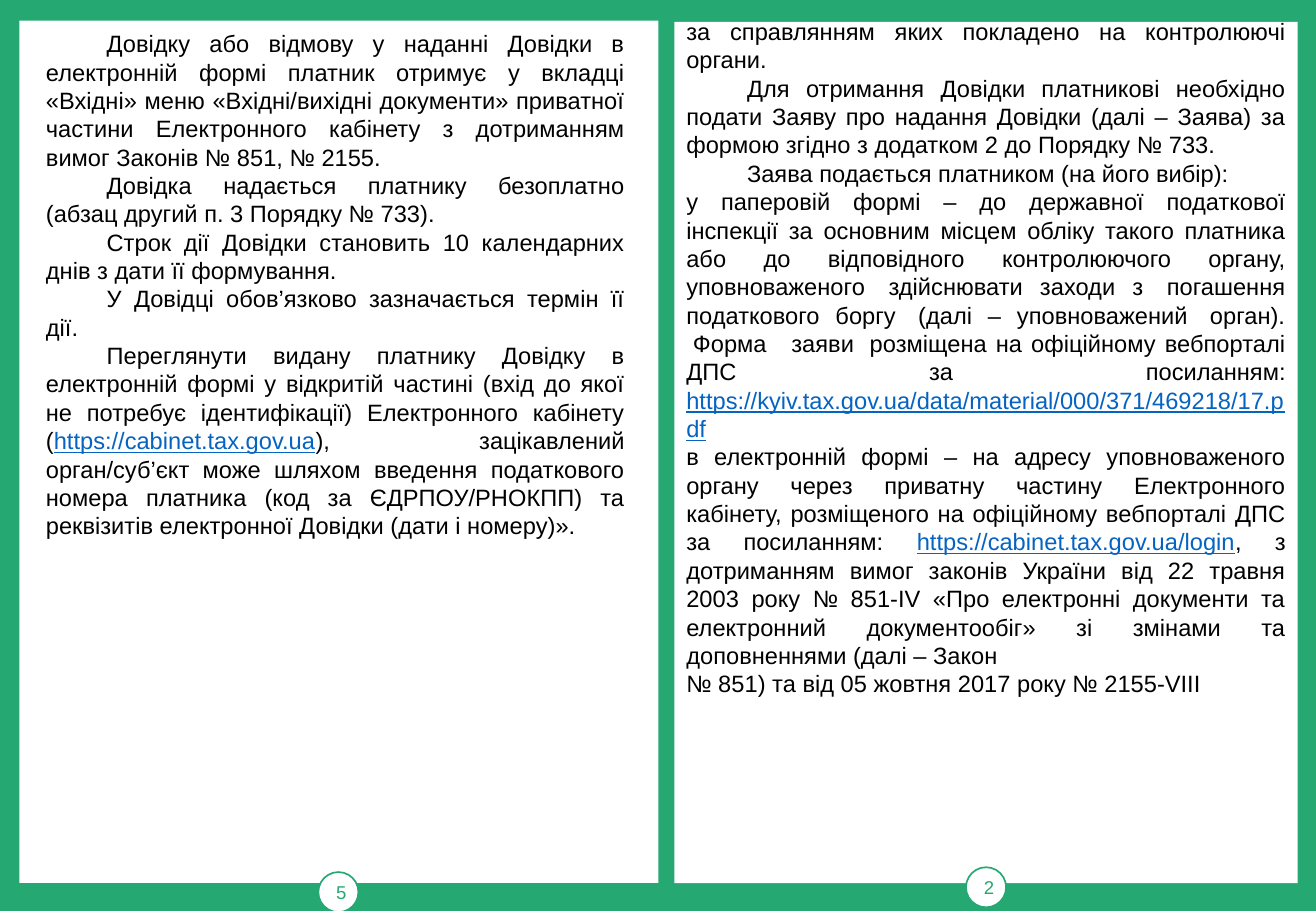
from pptx import Presentation
from pptx.dml.color import RGBColor
from pptx.enum.shapes import MSO_SHAPE
from pptx.enum.text import MSO_ANCHOR, PP_ALIGN
from pptx.util import Inches, Pt

GREEN = RGBColor(0x25, 0xA8, 0x72)
WHITE = RGBColor(0xFF, 0xFF, 0xFF)
BLACK = RGBColor(0, 0, 0)
BLUE = RGBColor(0x05, 0x63, 0xC1)
RECT = MSO_SHAPE.RECTANGLE
OVAL = MSO_SHAPE.OVAL
MIDDLE = MSO_ANCHOR.MIDDLE
CENTER = PP_ALIGN.CENTER
JUSTIFY = PP_ALIGN.JUSTIFY
FONT = "Arial"
INDENT = Inches(0.5)
HARD = chr(160)

RIGHT = [
    (False, ["за справлянням яких покладено на контролюючі органи."]),
    (True, ["Для отримання Довідки платникові необхідно подати Заяву про надання Довідки "
            "(далі – Заява) за формою згідно з додатком 2 до Порядку № 733."]),
    (True, ["Заява подається платником (на його вибір):"]),
    (False, ["у паперовій формі – до державної податкової інспекції за основним місцем "
             "обліку такого платника або до відповідного контролюючого органу, "
             f"уповноваженого {HARD}здійснювати заходи з {HARD}погашення податкового боргу "
             f"{HARD}(далі – уповноважений {HARD}орган). {HARD}Форма {HARD} заяви "
             f"{HARD}розміщена на офіційному вебпорталі ДПС за посиланням: ",
             "https://kyiv.tax.gov.ua/data/material/000/371/469218/17.pdf"]),
    (False, ["в електронній формі – на адресу уповноваженого органу через приватну частину "
             "Електронного кабінету, розміщеного на офіційному вебпорталі ДПС за посиланням: ",
             "https://cabinet.tax.gov.ua/login",
             ", з дотриманням вимог законів України від 22 травня 2003 року № 851-IV "
             "«Про електронні документи та електронний документообіг» зі змінами та "
             "доповненнями (далі – Закон"]),
    (False, ["№ 851) та від 05 жовтня 2017 року № 2155-VIII"]),
]
LEFT = [
    (True, ["Довідку або відмову у наданні Довідки в електронній формі платник отримує у "
            "вкладці «Вхідні» меню «Вхідні/вихідні документи» приватної частини "
            "Електронного кабінету з дотриманням вимог Законів № 851, № 2155."]),
    (True, ["Довідка надається платнику безоплатно (абзац другий п. 3 Порядку № 733)."]),
    (True, ["Строк дії Довідки становить 10 календарних днів з дати її формування."]),
    (True, ["У Довідці обов’язково зазначається термін її дії."]),
    (True, ["Переглянути видану платнику Довідку в електронній формі у відкритій частині "
            "(вхід до якої не потребує ідентифікації) Електронного кабінету (",
            "https://cabinet.tax.gov.ua",
            "), зацікавлений орган/суб’єкт може шляхом введення податкового номера "
            "платника (код за ЄДРПОУ/РНОКПП) та реквізитів електронної Довідки "
            "(дати і номеру)»."]),
]


def add_run(para, text, size=14, color=BLACK, line=False):
    run = para.add_run()
    run.text = text
    font = run.font
    font.name = FONT
    font.size = Pt(size)
    font.color.rgb = color
    font.underline = line


def add_form(group, kind, box):
    form = group.shapes.add_shape(kind, *map(Inches, box))
    form.shadow.inherit = False
    form.fill.solid()
    form.fill.fore_color.rgb = WHITE
    form.line.fill.background()
    return form


def add_page(slide, box, badge, number):
    group = slide.shapes.add_group_shape()
    add_form(group, RECT, box)
    form = add_form(group, OVAL, (*badge, 0.33, 0.33))
    form.line.color.rgb = GREEN
    form.line.width = Pt(1)
    frame = form.text_frame
    frame.vertical_anchor = MIDDLE
    para = frame.paragraphs[0]
    para.alignment = CENTER
    add_run(para, number, size=11, color=GREEN)


def add_body(slide, box, paras):
    frame = slide.shapes.add_textbox(*map(Inches, box)).text_frame
    frame.word_wrap = True
    for index, (inset, parts) in enumerate(paras):
        para = frame.add_paragraph() if index else frame.paragraphs[0]
        para.alignment = JUSTIFY
        if inset:
            props = para._p.get_or_add_pPr()
            props.set("marL", "0")
            props.set("indent", str(INDENT))
        for part in parts:
            link = part.startswith("https")
            add_run(para, part, color=BLUE if link else BLACK, line=link)


def main():
    deck = Presentation()
    deck.slide_width = Inches(10.83)
    deck.slide_height = Inches(7.5)
    slide = deck.slides.add_slide(deck.slide_layouts[6])
    slide.background.fill.solid()
    slide.background.fill.fore_color.rgb = GREEN
    add_page(slide, (0.16, 0.17, 5.26, 7.1), (2.62, 7.18), "5")
    add_page(slide, (5.55, 0.18, 5.13, 7.09), (7.95, 7.14), "2")
    add_body(slide, (5.55, 0.09, 5.13, 7.37), RIGHT)
    add_body(slide, (0.28, 0.19, 4.96, 6.08), LEFT)
    deck.save("out.pptx")


if __name__ == "__main__":
    main()
